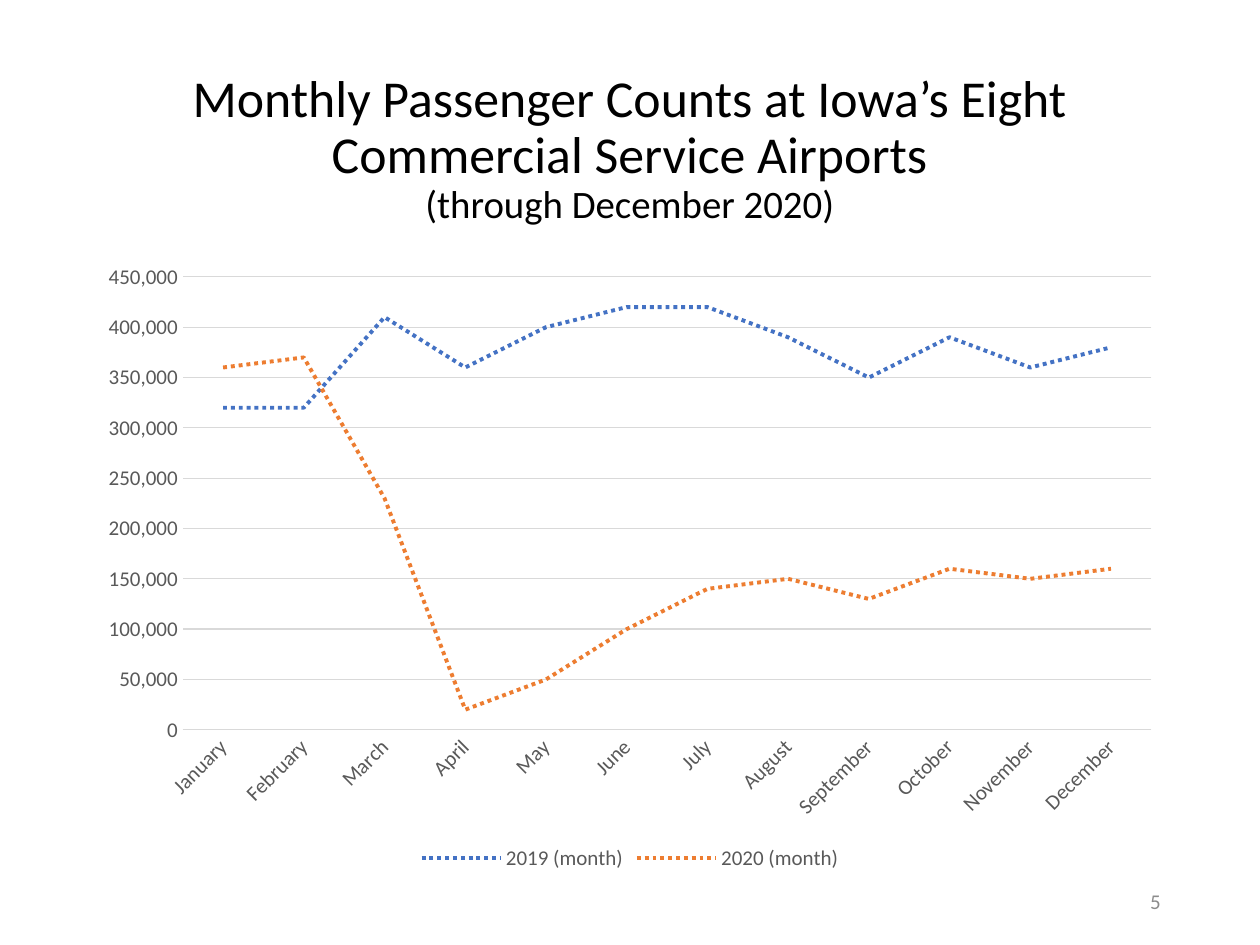
from dataclasses import dataclass

from pptx import Presentation
from pptx.chart.data import CategoryChartData
from pptx.dml.color import RGBColor
from pptx.enum.chart import XL_CHART_TYPE, XL_LEGEND_POSITION, XL_TICK_MARK
from pptx.enum.dml import MSO_LINE
from pptx.enum.text import MSO_ANCHOR, PP_ALIGN
from pptx.util import Inches, Pt


@dataclass(frozen=True)
class Theme:
    font: str = "Calibri"
    ink: str = "000000"
    label: str = "595959"
    number: str = "8C8C8C"
    grid: str = "D9D9D9"
    year_colors: tuple = ("4472C4", "ED7D31")
    title_size: float = 29.6
    subtitle_size: float = 22.2
    label_size: float = 12
    grid_width: float = 0.75
    series_width: float = 2.25


MONTHS = ("January", "February", "March", "April", "May", "June", "July",
          "August", "September", "October", "November", "December")
PASSENGERS = {
    "2019 (month)": (320000, 320000, 410000, 360000, 400000, 420000,
                     420000, 390000, 350000, 390000, 360000, 380000),
    "2020 (month)": (360000, 370000, 230000, 20000, 50000, 100000,
                     140000, 150000, 130000, 160000, 150000, 160000),
}


def apply(target, formats):
    for name, value in formats.items():
        setattr(target, name, value)


class SlideBuilder:
    def __init__(self, slide, theme):
        self.slide = slide
        self.theme = theme

    def style_font(self, font, size, color):
        apply(font, {"name": self.theme.font, "size": Pt(size), "bold": False})
        font.color.rgb = RGBColor.from_string(color)

    def style_line(self, line, color, width):
        line.color.rgb = RGBColor.from_string(color)
        line.width = Pt(width)

    def add_text(self, box, lines, color, align, anchor, spacing=1.0):
        frame = self.slide.shapes.add_textbox(*map(Inches, box)).text_frame
        apply(frame, {"word_wrap": True, "vertical_anchor": anchor})
        for index, (wording, size) in enumerate(lines):
            paragraph = frame.add_paragraph() if index else frame.paragraphs[0]
            apply(paragraph, {"alignment": align, "line_spacing": spacing})
            run = paragraph.add_run()
            run.text = wording
            self.style_font(run.font, size, color)

    def add_line_chart(self, box, categories, series):
        theme = self.theme
        data = CategoryChartData(number_format="#,##0")
        data.categories = categories
        for name, values in series.items():
            data.add_series(name, values)
        chart = self.slide.shapes.add_chart(
            XL_CHART_TYPE.LINE, *map(Inches, box), data).chart
        apply(chart, {"has_title": False, "has_legend": True})
        self.style_font(chart.font, theme.label_size, theme.label)
        apply(chart.legend, {"position": XL_LEGEND_POSITION.BOTTOM,
                             "include_in_layout": False})
        self.style_font(chart.legend.font, theme.label_size, theme.label)

        months, counts = chart.category_axis, chart.value_axis
        for axis in (months, counts):
            apply(axis, {"major_tick_mark": XL_TICK_MARK.NONE,
                         "minor_tick_mark": XL_TICK_MARK.NONE})
            self.style_font(axis.tick_labels.font, theme.label_size, theme.label)
        months.tick_labels.font
        months._element.txPr.bodyPr.set("rot", "-2700000")
        self.style_line(months.format.line, theme.grid, theme.grid_width)
        apply(counts, {"minimum_scale": 0, "maximum_scale": 450000,
                       "major_unit": 50000, "has_major_gridlines": True})
        apply(counts.tick_labels, {"number_format": "#,##0",
                                   "number_format_is_linked": False})
        counts.format.line.fill.background()
        self.style_line(counts.major_gridlines.format.line,
                        theme.grid, theme.grid_width)

        plot = chart.plots[0]
        plot.vary_by_categories = False
        for year, color in zip(plot.series, theme.year_colors):
            year.smooth = False
            self.style_line(year.format.line, color, theme.series_width)
            year.format.line.dash_style = MSO_LINE.ROUND_DOT


def main():
    deck = Presentation()
    apply(deck, {"slide_width": Inches(10), "slide_height": Inches(7.5)})
    theme = Theme()
    builder = SlideBuilder(deck.slides.add_slide(deck.slide_layouts[6]), theme)
    left, width = 0.69, 8.62
    number_width = 2.25

    builder.add_line_chart((left, 2, width, 4.95), MONTHS, PASSENGERS)
    builder.add_text((left + width - number_width, 6.95, number_width, 0.4),
                     [("5", theme.label_size)], theme.number,
                     PP_ALIGN.RIGHT, MSO_ANCHOR.MIDDLE)
    builder.add_text(
        (left, 0.4, width, 1.45),
        [("Monthly Passenger Counts at Iowa’s Eight Commercial Service Airports",
          theme.title_size),
         ("(through December 2020)", theme.subtitle_size)],
        theme.ink, PP_ALIGN.CENTER, MSO_ANCHOR.BOTTOM, spacing=0.9)
    deck.save("out.pptx")


if __name__ == "__main__":
    main()
